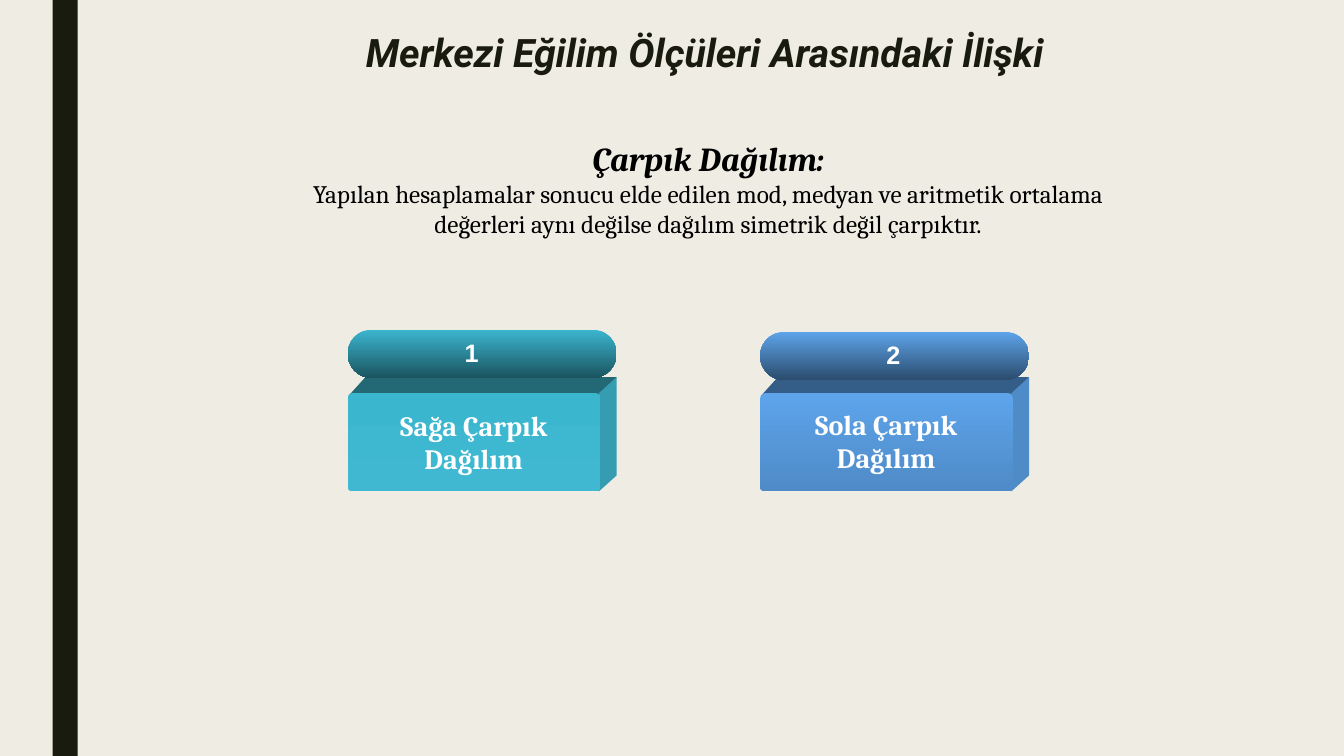
from pptx import Presentation, util as u
from pptx.dml.color import RGBColor
from pptx.enum import shapes, text

COLUMN = ROW = u.Inches(1 / 12)
COLUMNS, ROWS = 160, 90
DEPTH = 1.9
FRONT_TOP, FRONT_WIDTH, FRONT_HEIGHT = 46.8, 30.1, 11.7
PILL_WIDTH, PILL_HEIGHT = 32, 5.75


def color(value):
    return RGBColor.from_string(value)


def cells(left, top, width, height):
    return [u.Emu(round(length * unit)) for length, unit in
            zip((left, top, width, height), (COLUMN, ROW, COLUMN, ROW))]


def paint(shape, colors):
    shape.shadow.inherit = False
    shape.line.fill.background()
    if len(colors) == 1:
        shape.fill.solid()
        shape.fill.fore_color.rgb = color(colors[0])
        return
    shape.fill.gradient()
    shape.fill.gradient_angle = 270
    for stop, position, value in zip(shape.fill.gradient_stops, (0, 1), colors):
        stop.position = position
        stop.color.rgb = color(value)


def add_box(slide, area, colors, rounding=None):
    kind = shapes.MSO_SHAPE.RECTANGLE if rounding is None else shapes.MSO_SHAPE.ROUNDED_RECTANGLE
    shape = slide.shapes.add_shape(kind, *cells(*area))
    if rounding is not None:
        shape.adjustments[0] = rounding
    paint(shape, colors)


def add_face(slide, points, fill):
    corners = [(round(x * COLUMN), round(y * ROW)) for x, y in points]
    builder = slide.shapes.build_freeform(*corners[0])
    builder.add_line_segments(corners[1:], close=True)
    paint(builder.convert_to_shape(), [fill])


def add_text(slide, area, lines, font, fill, wrap=True, spacing=None):
    frame = slide.shapes.add_textbox(*cells(*area)).text_frame
    frame.word_wrap = wrap
    for index, (words, size, bold, italic) in enumerate(lines):
        paragraph = frame.add_paragraph() if index else frame.paragraphs[0]
        paragraph.text = words
        paragraph.alignment = text.PP_ALIGN.CENTER
        if spacing:
            paragraph.line_spacing = spacing
        paragraph.font.name = font
        paragraph.font.size = u.Pt(size)
        paragraph.font.bold = bold
        paragraph.font.italic = italic
        paragraph.font.color.rgb = color(fill)


def add_card(slide, left, pill_top, number, number_left, label, label_top,
             front, pill, top_face, side_face):
    right, bottom = left + FRONT_WIDTH, FRONT_TOP + FRONT_HEIGHT
    back_top, back_right = FRONT_TOP - DEPTH, right + DEPTH
    add_face(slide, [(left + 0.2, FRONT_TOP + 0.2), (left + DEPTH + 0.2, back_top),
                     (back_right, back_top), (right, FRONT_TOP + 0.2)], top_face)
    add_face(slide, [(right - 0.2, FRONT_TOP), (back_right, back_top),
                     (back_right, bottom - DEPTH), (right - 0.2, bottom)], side_face)
    add_box(slide, (left, FRONT_TOP, FRONT_WIDTH, FRONT_HEIGHT), front, 0.05)
    add_box(slide, (left, pill_top, PILL_WIDTH, PILL_HEIGHT), pill, 0.5)
    add_text(slide, (number_left, pill_top + 0.35, 4.1, 4.8),
             [(number, 18, True, False)], "Arial", "FFFFFF", wrap=False)
    add_text(slide, (left + 1, label_top, 28, 9.25),
             [(label, 20, True, False)], "Cambria", "FFFFFF")


def main():
    presentation = Presentation()
    presentation.slide_width = COLUMN * COLUMNS
    presentation.slide_height = ROW * ROWS
    slide = presentation.slides.add_slide(presentation.slide_layouts[6])
    slide.background.fill.solid()
    slide.background.fill.fore_color.rgb = color("EFEDE3")

    add_box(slide, (6.25, 0, 3, ROWS), ["191B0E"])
    add_text(slide, (29.9, 3.5, 108, 8.25),
             [("Merkezi Eğilim Ölçüleri Arasındaki İlişki", 28, True, True)],
             "Roboto", "191B0E", spacing=0.89)
    add_text(slide, (30.7, 15.8, 107.2, 13.3),
             [("Çarpık Dağılım:", 24, True, True),
              ("Yapılan hesaplamalar sonucu elde edilen mod, medyan ve aritmetik ortalama "
               "değerleri aynı değilse dağılım simetrik değil çarpıktır.", 18, False, False)],
             "Cambria", "000000")
    add_card(slide, 41.4, 39.25, "1", 54.1, "Sağa Çarpık Dağılım", 48,
             ["3BB6CF", "41B8D1"], ["3BB6CF", "1B5460"], "226875", "359CB2")
    add_card(slide, 90.5, 39.5, "2", 104.3, "Sola Çarpık Dağılım", 47.9,
             ["5DA4EB", "4F8BC7"], ["5DA4EB", "2B4C6D"], "345D88", "4F8BC7")
    presentation.save("out.pptx")


if __name__ == "__main__":
    main()
